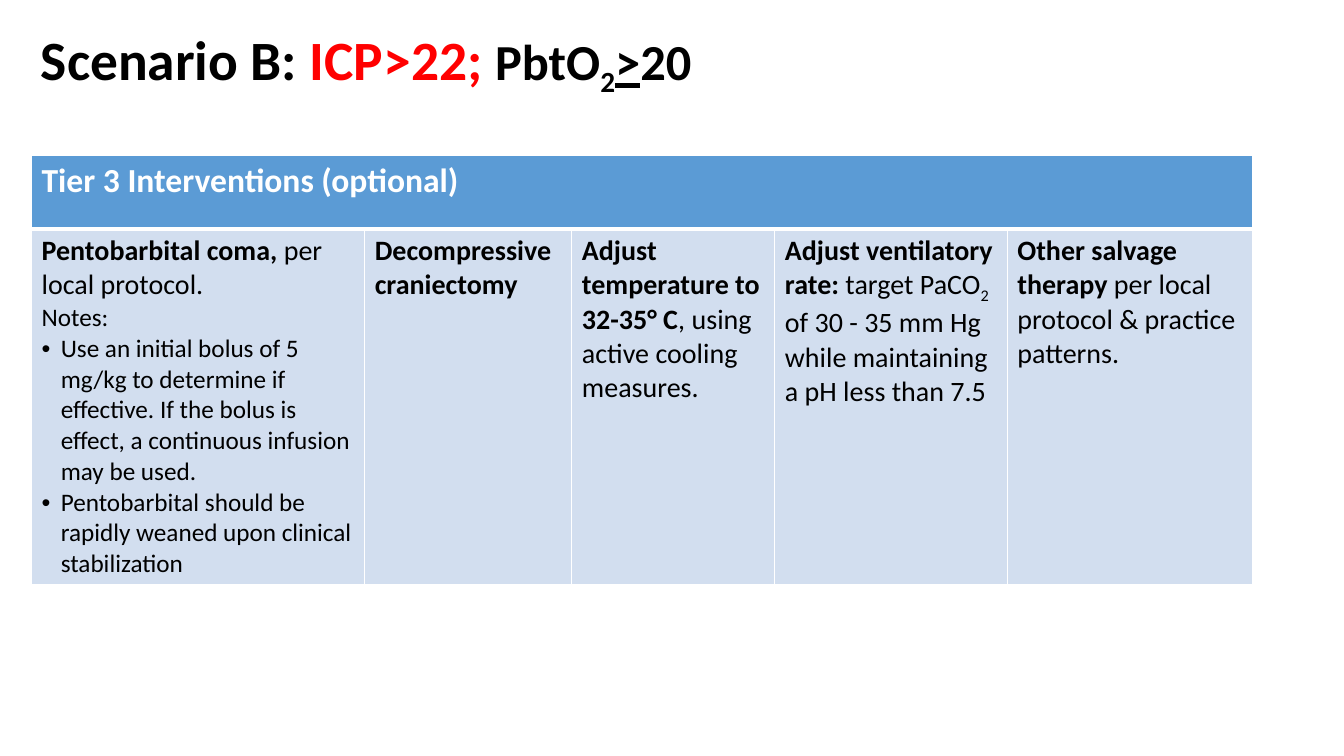
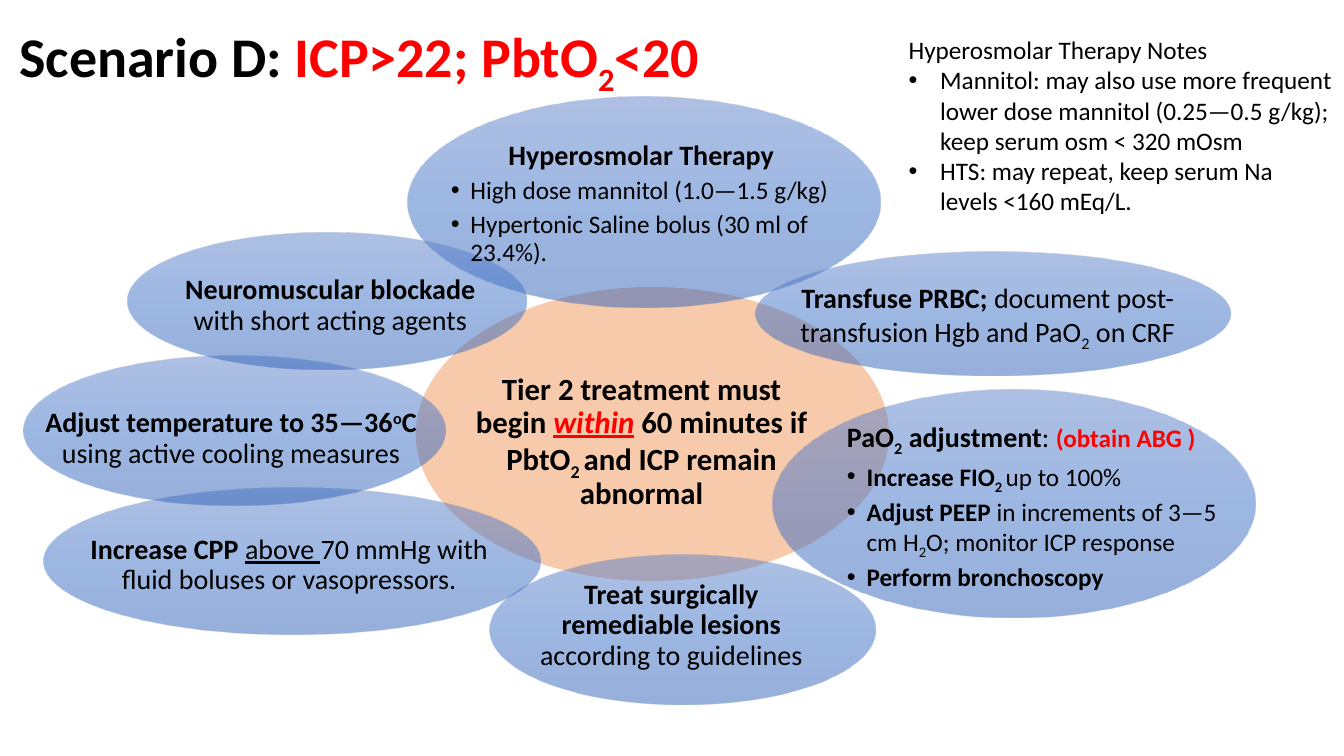
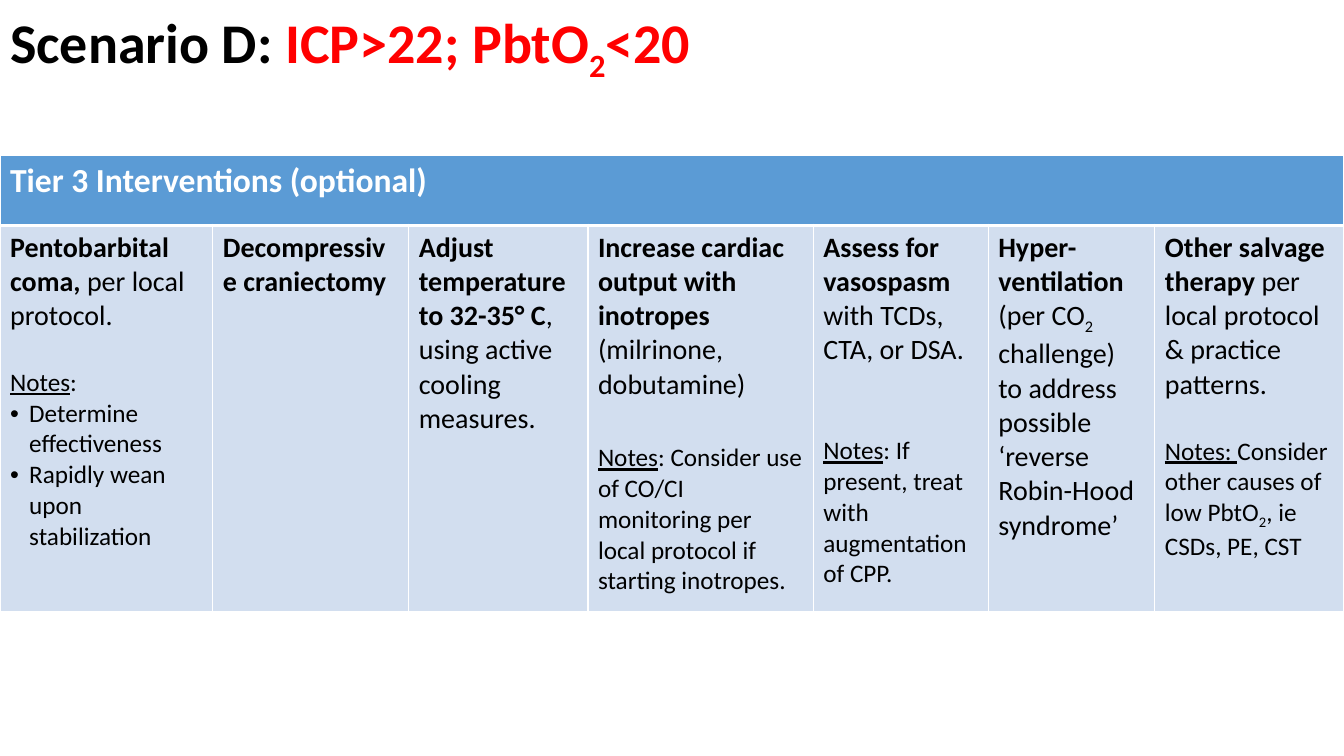
from dataclasses import dataclass

from pptx import Presentation
from pptx.dml.color import RGBColor
from pptx.enum.shapes import MSO_SHAPE
from pptx.enum.text import MSO_ANCHOR, MSO_AUTO_SIZE, PP_ALIGN
from pptx.oxml import parse_xml
from pptx.oxml.ns import qn
from pptx.util import Pt
from lxml.etree import SubElement

COLORS = {
    "black": "000000", "white": "FFFFFF", "red": "FF0000",
    "header": "5B9BD5", "cell": "D2DEEF", "core": "F7CAAC",
    "bubble_top": "5E81C9", "bubble_middle": "3B70C9", "bubble_bottom": "2E60B8",
}
FONT = "Calibri"
TITLE_SIZE = (828, 59)
TABLE_TOP = 111
DRAWING_NS = "http://schemas.openxmlformats.org/drawingml/2006/main"


# Text model: a run is (text, marks) or (text, marks, size)
# Marks: b bold, i italic, u underline, r red, w white, - subscript, + superscript
@dataclass
class Para:
    runs: list
    size: float = 20
    indent: float = 0
    center: bool = False
    before: float = 0
    spacing: float = 1.0


def para(*runs, **options):
    return Para(list(runs), **options)


def bullet(*runs, size=18, indent=13.7, **options):
    return Para(list(runs), size=size, indent=indent, **options)


def label_bullet(*runs):
    return bullet(*runs, indent=14, before=4.9, spacing=0.9)


def label_line(*runs, size=20, center=True):
    return Para(list(runs), size=size, center=center, spacing=0.9)


def color(name):
    return RGBColor.from_string(COLORS[name])


# Text writing
def add_run(paragraph, text, marks="", size=20):
    run = paragraph.add_run()
    run.text = text
    font = run.font
    font.name = FONT
    font.size = Pt(size)
    font.bold = "b" in marks
    font.italic = "i" in marks
    font.underline = "u" in marks
    font.color.rgb = color("red" if "r" in marks else "white" if "w" in marks else "black")
    if "-" in marks or "+" in marks:
        baseline = "-25000" if "-" in marks else "30000"
        run._r.get_or_add_rPr().set("baseline", baseline)


def add_bullet(paragraph, indent):
    properties = paragraph._p.get_or_add_pPr()
    properties.set("marL", str(Pt(indent)))
    properties.set("indent", str(-Pt(indent)))
    SubElement(properties, qn("a:buFont")).set("typeface", "Arial")
    SubElement(properties, qn("a:buChar")).set("char", "•")


def write(frame, paras):
    for index, item in enumerate(paras):
        paragraph = frame.paragraphs[0] if index == 0 else frame.add_paragraph()
        if item.indent:
            add_bullet(paragraph, item.indent)
        paragraph.alignment = PP_ALIGN.CENTER if item.center else PP_ALIGN.LEFT
        paragraph.line_spacing = item.spacing
        paragraph.space_before = Pt(item.before)
        for run in item.runs:
            text, marks, size = (*run, item.size)[:3]
            add_run(paragraph, text, marks, size)


def set_frame(frame, anchor, side, top):
    frame.word_wrap = True
    frame.auto_size = MSO_AUTO_SIZE.NONE
    frame.vertical_anchor = anchor
    frame.margin_left = frame.margin_right = Pt(side)
    frame.margin_top = frame.margin_bottom = Pt(top)


# Slide elements
def add_slide(presentation, left, top, *title_runs, size=40):
    slide = presentation.slides.add_slide(presentation.slide_layouts[5])
    title = slide.shapes.title
    title.left, title.top = Pt(left), Pt(top)
    title.width, title.height = (Pt(length) for length in TITLE_SIZE)
    set_frame(title.text_frame, MSO_ANCHOR.BOTTOM, 7.2, 3.6)
    write(title.text_frame, [para(*title_runs, size=size, spacing=0.9)])
    return slide


def add_text(slide, box, paras, anchor=MSO_ANCHOR.MIDDLE, side=2, top=2):
    shape = slide.shapes.add_textbox(*(Pt(length) for length in box))
    set_frame(shape.text_frame, anchor, side, top)
    write(shape.text_frame, paras)


def add_ellipse(slide, box):
    shape = slide.shapes.add_shape(MSO_SHAPE.OVAL, *(Pt(length) for length in box))
    shape.shadow.inherit = False
    shape.line.fill.background()
    shape.fill.solid()
    shape.fill.fore_color.rgb = color("core")
    return shape


def add_bubble(slide, box):
    shape = add_ellipse(slide, box)
    names = ("bubble_top", "bubble_middle", "bubble_bottom")
    stops = "".join(
        f'<a:gs pos="{index * 50000}"><a:srgbClr val="{COLORS[name]}">'
        '<a:alpha val="50000"/></a:srgbClr></a:gs>'
        for index, name in enumerate(names))
    gradient = parse_xml(
        f'<a:gradFill xmlns:a="{DRAWING_NS}" rotWithShape="1"><a:gsLst>{stops}</a:gsLst>'
        '<a:lin ang="5400000" scaled="0"/></a:gradFill>')
    properties = shape.element.spPr
    properties.replace(properties.find(qn("a:solidFill")), gradient)


def style_cell(cell, fill, bottom=1):
    properties = cell._tc.get_or_add_tcPr()
    for side, width in (("L", 1), ("R", 1), ("T", 1), ("B", bottom)):
        line = SubElement(properties, qn(f"a:ln{side}"), w=str(Pt(width)))
        solid = SubElement(line, qn("a:solidFill"))
        SubElement(solid, qn("a:srgbClr"), val=COLORS["white"])
    cell.fill.solid()
    cell.fill.fore_color.rgb = color(fill)


def add_interventions(slide, left, widths, heights, columns):
    table = slide.shapes.add_table(
        2, len(widths), Pt(left), Pt(TABLE_TOP), Pt(sum(widths)), Pt(sum(heights))).table
    for row, height in zip(table.rows, heights):
        row.height = Pt(height)
    for index, (width, paras) in enumerate(zip(widths, columns)):
        table.columns[index].width = Pt(width)
        style_cell(table.cell(0, index), "header", bottom=3)
        style_cell(table.cell(1, index), "cell")
        write(table.cell(1, index).text_frame, paras)
    table.cell(0, 0).merge(table.cell(0, len(widths) - 1))
    write(table.cell(0, 0).text_frame,
          [para(("Tier 3 Interventions (optional)", "bw"), size=24)])


# Wording that slides share
SCENARIO_D = [("Scenario D: ", "b"), ("ICP>22; PbtO", "br"), ("2", "br-"), ("<20", "br")]
COMA = para(("Pentobarbital coma, ", "b"), ("per local protocol.", ""))
CRANIECTOMY = [para(("Decompressive craniectomy", "b"))]
COOLING = [para(("Adjust temperature to 32-35° C", "b"),
                (", using active cooling measures.", ""))]
SALVAGE = para(("Other salvage therapy ", "b"),
               ("per local protocol & practice patterns.", ""))

SCENARIO_B_COLUMNS = [
    [COMA,
     para(("Notes:", ""), size=18),
     bullet(("Use an initial bolus of 5 mg/kg to determine if effective. If the bolus is "
             "effect, a continuous infusion may be used.", "")),
     bullet(("Pentobarbital should be rapidly weaned upon clinical stabilization", ""))],
    CRANIECTOMY,
    COOLING,
    [para(("Adjust ventilatory rate: ", "b"), ("target PaCO", ""), ("2", "-"),
          (" of 30 - 35 mm Hg while maintaining a pH less than 7.5", ""))],
    [SALVAGE],
]

SCENARIO_D_COLUMNS = [
    [COMA,
     para(("Notes", "u"), (":", ""), size=18, before=24.4),
     bullet(("Determine effectiveness", "")),
     bullet(("Rapidly wean upon stabilization", ""))],
    CRANIECTOMY,
    COOLING,
    [para(("Increase cardiac output with inotropes ", "b"), ("(milrinone, dobutamine)", "")),
     para(("Notes", "u"),
          (": Consider use of CO/CI monitoring per local protocol if starting inotropes.", ""),
          size=18, before=29.3)],
    [para(("Assess for vasospasm ", "b"), ("with TCDs, CTA, or DSA.", "")),
     para(("Notes", "u"), (": If present, treat with augmentation of CPP.", ""),
          size=18, before=48.8)],
    [para(("Hyper-ventilation", "b"), (" (per CO", ""), ("2 ", "-"),
          ("challenge) to address possible ‘reverse Robin-Hood syndrome’", ""))],
    [SALVAGE,
     para(("Notes: ", "u"), ("Consider other causes of low PbtO", ""), ("2", "-"),
          (", ie CSDs, PE, CST", ""), size=18, before=24.4)],
]

CORE_TEXT = [label_line(
    ("Tier 2 treatment must begin ", "b"), ("within", "biur"), (" ", "b"),
    ("60 minutes if PbtO", "b"), ("2 ", "b-"), ("and ICP remain abnormal", "b"), size=22)]

# Bubble box, label box, label text
TIER_2_TOPICS = [
    ((291, 69, 338, 151), (320, 88, 276, 115), [
        label_line(("Hyperosmolar Therapy", "b")),
        label_bullet(("High dose mannitol (1.0—1.5 g/kg)", "")),
        label_bullet(("Hypertonic Saline bolus (30 ml of 23.4%).", ""))]),
    ((552, 278, 345, 163), (603, 305, 283, 113), [
        label_line(("PaO", "b"), ("2", "b-"), (" adjustment", "b"), (": ", ""),
                   ("(obtain ABG )", "br", 18), center=False),
        label_bullet(("Increase FIO", "b"), ("2 ", "b-"), ("up to 100%", "")),
        label_bullet(("Adjust PEEP", "b"), (" in increments of 3—5 cm H", ""), ("2", "-"),
                     ("O; monitor ICP response", "")),
        label_bullet(("Perform bronchoscopy", "b"))]),
    ((540, 180, 339, 88), (564, 177, 283, 99), [
        label_line(("Transfuse PRBC; ", "b"), ("document post-transfusion Hgb and PaO", ""),
                   ("2", "-"), (" on CRF", ""))]),
    ((350, 396, 275, 107), (372, 399, 215, 96), [
        label_line(("Treat surgically remediable lesions ", "b"),
                   ("according to guidelines", ""))]),
    ((31, 348, 355, 105), (56, 361, 301, 86), [
        label_line(("Increase CPP ", "b"), ("above ", "u"),
                   ("70 mmHg with fluid boluses or vasopressors.", ""))]),
    ((17, 254, 301, 107), (24, 273, 282, 81), [
        label_line(("Adjust temperature to 35—36", "b"), ("o", "b+"), ("C ", "b"),
                   ("using active cooling measures", ""))]),
    ((91, 166, 285, 98), (120, 183, 232, 71), [
        label_line(("Neuromuscular blockade ", "b"), ("with short acting agents", ""))]),
]

HYPEROSMOLAR_NOTES = [
    para(("Hyperosmolar Therapy Notes", ""), size=18),
    bullet(("Mannitol: may also use more frequent lower dose mannitol (0.25—0.5 g/kg); "
            "keep serum osm < 320 mOsm", ""), indent=22.5),
    bullet(("HTS: may repeat, keep serum Na levels <160 mEq/L.", ""), indent=22.5),
]


def main():
    presentation = Presentation()
    presentation.slide_width, presentation.slide_height = Pt(960), Pt(540)

    # Scenario B, tier 3
    slide = add_slide(presentation, 22, 11.5, ("Scenario B: ", "b"), ("ICP>22; ", "br"),
                      ("PbtO", "b", 36), ("2", "b-", 36), (">", "bu", 36), ("20", "b", 36),
                      size=39.6)
    add_interventions(slide, 22.5, (238, 148, 145, 166, 175), (52.5, 253), SCENARIO_B_COLUMNS)

    # Scenario D, tier 2
    slide = add_slide(presentation, 6.5, 10, *SCENARIO_D)
    add_ellipse(slide, (297, 205, 338, 210))
    add_text(slide, (335.5, 258.5, 245.5, 115), CORE_TEXT)
    for bubble_box, _, _ in TIER_2_TOPICS:
        add_bubble(slide, bubble_box)
    for _, label_box, paras in TIER_2_TOPICS:
        add_text(slide, label_box, paras)
    add_text(slide, (642, 21, 318, 138), HYPEROSMOLAR_NOTES, MSO_ANCHOR.TOP, 7.2, 3.6)

    # Scenario D, tier 3
    slide = add_slide(presentation, 0, 0, *SCENARIO_D)
    add_interventions(slide, 0, (152, 140, 128, 161, 125, 119, 135), (50, 276),
                      SCENARIO_D_COLUMNS)

    presentation.save("out.pptx")


if __name__ == "__main__":
    main()
